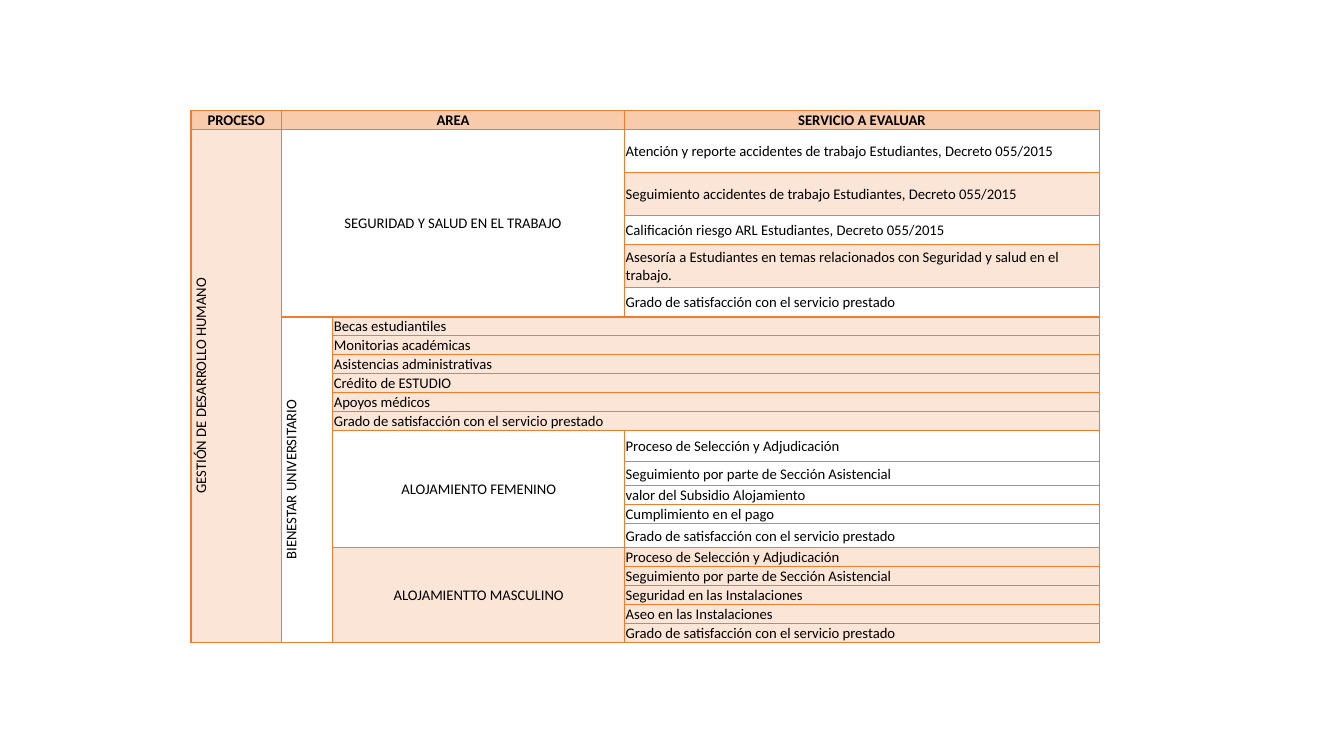
from dataclasses import dataclass
from typing import Optional

import lxml.etree
import pptx
import pptx.dml.color
import pptx.enum.text
import pptx.oxml.ns
import pptx.table
import pptx.util

EMU_PER_PX = 9525
SLIDE_WIDTH, SLIDE_HEIGHT = 1280, 720
TABLE_LEFT, TABLE_TOP, TABLE_HEIGHT = 182, 105, 500
COLUMN_WIDTHS = (86, 49, 278, 452)
HEADER_HEIGHT = 14

FONT_NAME = "Calibri"
FONT_SIZE = pptx.util.Pt(10.5)
BORDER_WIDTH = pptx.util.Pt(1)
BLACK = pptx.dml.color.RGBColor(0x00, 0x00, 0x00)
ORANGE = pptx.dml.color.RGBColor(0xED, 0x7D, 0x31)
PEACH = pptx.dml.color.RGBColor(0xF8, 0xCB, 0xAD)
PALE_PEACH = pptx.dml.color.RGBColor(0xFB, 0xE5, 0xD6)
Fill = Optional[pptx.dml.color.RGBColor]


@dataclass(frozen=True)
class Service:
    text: str
    height: int = 14
    fill: Fill = None


@dataclass(frozen=True)
class Area:
    """A block of services; without a name they start at the area's column."""
    services: tuple[Service, ...]
    name: str = ""
    column: int = 2
    fill: Fill = None


@dataclass(frozen=True)
class Entry:
    text: str
    row: int
    column: int
    row_span: int = 1
    column_span: int = 1
    fill: Fill = None
    centered: bool = True
    bold: bool = False
    vertical: bool = False


SATISFACTION = "Grado de satisfacción con el servicio prestado"
SELECTION = "Proceso de Selección y Adjudicación"
FOLLOW_UP = "Seguimiento por parte de Sección Asistencial"

SAFETY = Area((
    Service("Atención y reporte accidentes de trabajo Estudiantes, Decreto 055/2015", 41),
    Service("Seguimiento accidentes de trabajo Estudiantes, Decreto 055/2015", 41, PALE_PEACH),
    Service("Calificación riesgo ARL Estudiantes, Decreto 055/2015", 28),
    Service("Asesoría a Estudiantes en temas relacionados con Seguridad y salud en el trabajo.",
            41, PALE_PEACH),
    Service(SATISFACTION, 28),
), "SEGURIDAD Y SALUD EN EL TRABAJO", column=1)
SUPPORT = Area(tuple(Service(text, fill=PALE_PEACH) for text in (
    "Becas estudiantiles", "Monitorias académicas", "Asistencias administrativas",
    "Crédito de ESTUDIO", "Apoyos médicos", SATISFACTION,
)))
WOMEN_HOUSING = Area((
    Service(SELECTION, 30),
    Service(FOLLOW_UP, 23),
    Service("valor del Subsidio Alojamiento"),
    Service("Cumplimiento en el pago"),
    Service(SATISFACTION, 23),
), "ALOJAMIENTO FEMENINO")
MEN_HOUSING = Area(tuple(Service(text, fill=PALE_PEACH) for text in (
    SELECTION, FOLLOW_UP, "Seguridad en las Instalaciones",
    "Aseo en las Instalaciones", SATISFACTION,
)), "ALOJAMIENTTO MASCULINO", fill=PALE_PEACH)
AREAS = (SAFETY, SUPPORT, WOMEN_HOUSING, MEN_HOUSING)


def px(length: int) -> pptx.util.Emu:
    return pptx.util.Emu(length * EMU_PER_PX)


def add_borders(cell: pptx.table._Cell) -> None:
    properties = cell._tc.get_or_add_tcPr()
    for side in ("a:lnL", "a:lnR", "a:lnT", "a:lnB"):
        line = lxml.etree.SubElement(
            properties, pptx.oxml.ns.qn(side), w=str(BORDER_WIDTH))
        solid = lxml.etree.SubElement(line, pptx.oxml.ns.qn("a:solidFill"))
        lxml.etree.SubElement(solid, pptx.oxml.ns.qn("a:srgbClr"), val=str(ORANGE))


def fill_cell(cell: pptx.table._Cell, fill: Fill) -> None:
    if fill is None:
        cell.fill.background()
    else:
        cell.fill.solid()
        cell.fill.fore_color.rgb = fill


def write_entry(table: pptx.table.Table, entry: Entry) -> None:
    last_row = entry.row + entry.row_span - 1
    last_column = entry.column + entry.column_span - 1
    for row in range(entry.row, last_row + 1):
        for column in range(entry.column, last_column + 1):
            covered = table.cell(row, column)
            add_borders(covered)
            fill_cell(covered, entry.fill)
            covered.text_frame.paragraphs[0].font.size = FONT_SIZE

    cell = table.cell(entry.row, entry.column)
    if entry.row_span > 1 or entry.column_span > 1:
        cell.merge(table.cell(last_row, last_column))
    cell.margin_left = cell.margin_right = cell.margin_top = px(1)
    cell.margin_bottom = 0
    cell.vertical_anchor = pptx.enum.text.MSO_ANCHOR.MIDDLE
    if entry.vertical:
        cell._tc.get_or_add_tcPr().set("vert", "vert270")

    paragraph = cell.text_frame.paragraphs[0]
    paragraph.text = entry.text
    alignment = pptx.enum.text.PP_ALIGN
    paragraph.alignment = alignment.CENTER if entry.centered else alignment.LEFT
    font = paragraph.runs[0].font
    font.name, font.size, font.bold = FONT_NAME, FONT_SIZE, entry.bold
    font.color.rgb = BLACK


def list_entries() -> list[Entry]:
    """Place the headings, the two vertical labels and every area in the grid."""
    row_count = 1 + sum(len(area.services) for area in AREAS)
    welfare_row = 1 + len(SAFETY.services)
    entries = [
        Entry("PROCESO", 0, 0, fill=PEACH, bold=True),
        Entry("AREA", 0, 1, column_span=2, fill=PEACH, bold=True),
        Entry("SERVICIO A EVALUAR", 0, 3, fill=PEACH, bold=True),
        Entry("GESTIÓN DE DESARROLLO HUMANO", 1, 0, row_span=row_count - 1,
              fill=PALE_PEACH, vertical=True),
        Entry("BIENESTAR UNIVERSITARIO", welfare_row, 1,
              row_span=row_count - welfare_row, vertical=True),
    ]
    row = 1
    for area in AREAS:
        if area.name:
            entries.append(Entry(area.name, row, area.column, len(area.services),
                                 3 - area.column, area.fill))
        service_column = 3 if area.name else area.column
        for service in area.services:
            entries.append(Entry(service.text, row, service_column,
                                 column_span=4 - service_column,
                                 fill=service.fill, centered=False))
            row += 1
    return entries


def main() -> None:
    presentation = pptx.Presentation()
    presentation.slide_width = px(SLIDE_WIDTH)
    presentation.slide_height = px(SLIDE_HEIGHT)
    slide = presentation.slides.add_slide(presentation.slide_layouts[6])

    heights = [HEADER_HEIGHT]
    heights += [service.height for area in AREAS for service in area.services]
    frame = slide.shapes.add_table(
        len(heights), len(COLUMN_WIDTHS), px(TABLE_LEFT), px(TABLE_TOP),
        px(sum(COLUMN_WIDTHS)), px(TABLE_HEIGHT))
    table = frame.table
    table.first_row = table.horz_banding = False
    for column, width in zip(table.columns, COLUMN_WIDTHS):
        column.width = px(width)
    for row, height in zip(table.rows, heights):
        row.height = px(height)
    frame.height = px(TABLE_HEIGHT)
    for entry in list_entries():
        write_entry(table, entry)

    presentation.save("out.pptx")


if __name__ == "__main__":
    main()
